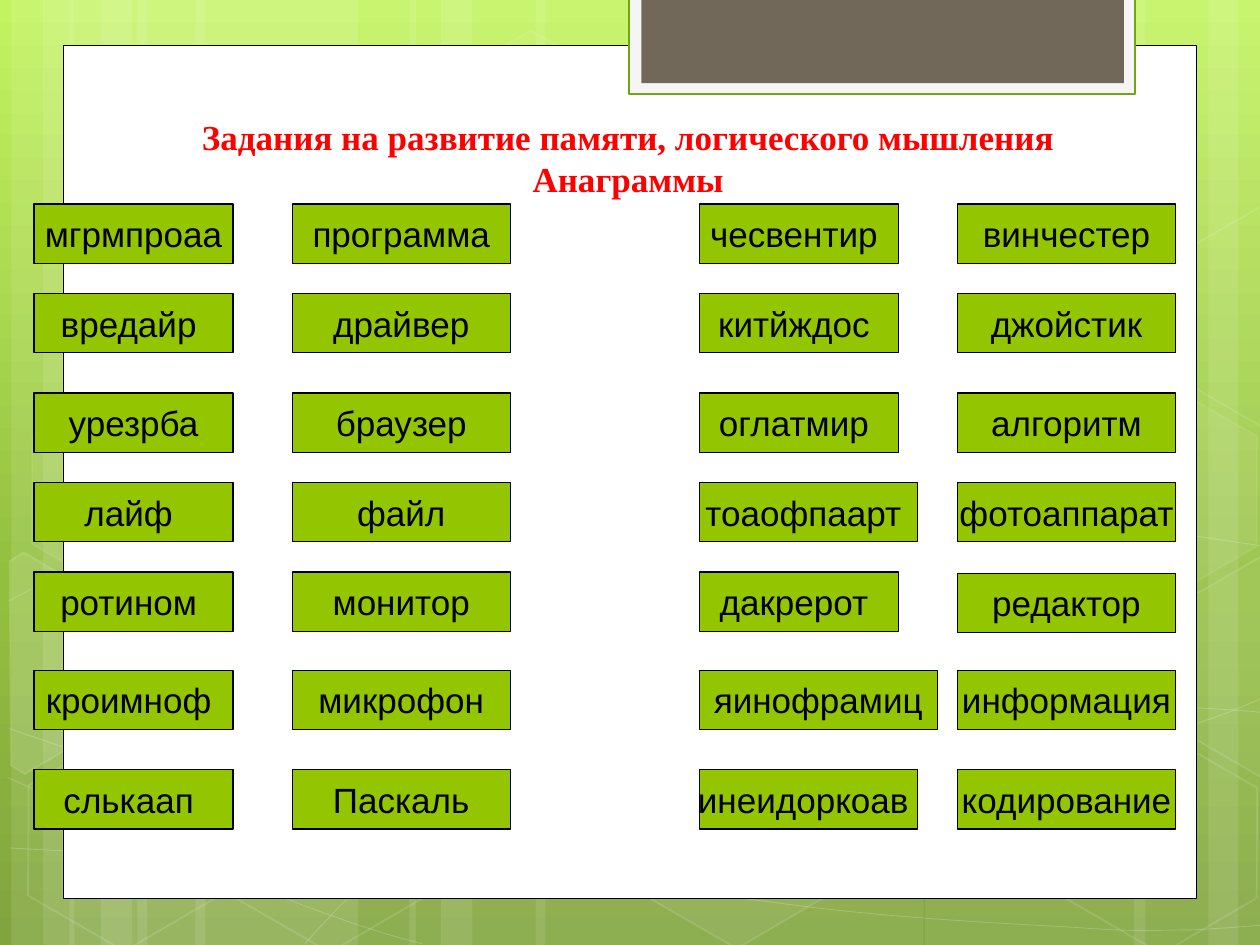
from copy import deepcopy
from math import cos, radians, sin

from lxml import etree
from pptx import Presentation
from pptx.dml.color import RGBColor
from pptx.enum.shapes import MSO_SHAPE
from pptx.enum.text import MSO_ANCHOR, PP_ALIGN
from pptx.oxml.ns import qn
from pptx.util import Inches, Pt

RECTANGLE, HEXAGON = MSO_SHAPE.RECTANGLE, MSO_SHAPE.HEXAGON
CENTER, MIDDLE, BOTTOM = PP_ALIGN.CENTER, MSO_ANCHOR.MIDDLE, MSO_ANCHOR.BOTTOM
WHITE, BLACK, RED, GREEN = "FFFFFF", "000000", "FF0000", "94C600"

TITLE = ["Задания на развитие памяти, логического мышления", "Анаграммы"]
ANAGRAMS = [
    [("мгрмпроаа", "программа"), ("чесвентир ", "винчестер")],
    [("вредайр ", "драйвер"), ("китйждос ", "джойстик")],
    [("урезрба", "браузер"), ("оглатмир ", "алгоритм")],
    [("лайф ", "файл"), ("тоаофпаарт ", "фотоаппарат")],
    [("ротином ", "монитор"), ("дакрерот ", "редактор")],
    [("кроимноф ", "микрофон"), ("яинофрамиц", "информация")],
    [("слькаап ", "Паскаль"), ("инеидоркоав ", "кодирование")],
]
ROW_TOPS = [1.62, 2.33, 3.12, 3.83, 4.54, 5.32, 6.11]
PAIR_LEFTS = [0.27, 5.55]
ANSWER_OFFSET, BOX_HEIGHT = 2.05, 0.47
PUZZLE_WIDTH, ANSWER_WIDTH = 1.58, 1.73
WIDE_PUZZLES = {"тоаофпаарт ": 1.73, "яинофрамиц": 1.89, "инеидоркоав ": 1.73}
LOWERED = {"редактор": 0.01}

GRADIENT = [(0, "C3F35F"), (0.62, "93BF3F"), (1, "81A53E")]
STRIPES = [
    (1.09, 1.75), (0.09, 0.5), (0.34, 0.83), (1.55, 1.75), (0.55, 0.5), (0.8, 0.83),
    (7.34, 1.75), (9.59, 0.5), (9, 0.83), (4.25, 3.08), (3.25, 0.5), (3.5, 0.83),
]
CURVES = [
    [(0.07, 6.73), (0.61, 6.76), (1.15, 6.79), (1.9, 6.78), (2.65, 6.77), (3.58, 6.75),
     (4.58, 6.65), (5.58, 6.55), (7, 6.36), (7.92, 6.17), (8.83, 5.98), (9.77, 5.68),
     (10.07, 5.51)],
    [(0.07, 4.77), (0.36, 4.61), (0.65, 4.46), (1.21, 4.31), (1.78, 4.16), (2.59, 3.94),
     (3.47, 3.87), (4.36, 3.8), (5.44, 3.79), (6.54, 3.87), (7.64, 3.95), (9.47, 4.26),
     (10.07, 4.34)],
    [(0.06, 6.17), (1.27, 6.72), (2.47, 7.27), (3.35, 7.49)],
    [(0.07, 5.78), (0.38, 5.89), (0.7, 6), (1.28, 6.16), (1.86, 6.31), (2.73, 6.56),
     (3.57, 6.73), (4.4, 6.9), (5.45, 7.08), (6.28, 7.18), (7.11, 7.29), (8, 7.33),
     (8.53, 7.36), (9.06, 7.4), (9.19, 7.38), (9.45, 7.38), (9.71, 7.37), (9.89, 7.35),
     (10.07, 7.34)],
    [(2.42, 7.49), (2.6, 7.29), (2.78, 7.09), (3.02, 6.91), (3.26, 6.72), (3.6, 6.53),
     (3.88, 6.39), (4.16, 6.25), (4.33, 6.19), (4.69, 6.09), (5.06, 5.99), (5.73, 5.85),
     (6.08, 5.78), (6.44, 5.71), (6.49, 5.71), (6.8, 5.69), (7.11, 5.66), (7.6, 5.63),
     (7.94, 5.62), (8.29, 5.61), (8.86, 5.62), (8.86, 5.62), (9.08, 5.62), (9.31, 5.62),
     (9.53, 5.62), (9.71, 5.63), (9.88, 5.64), (9.97, 5.65), (10.06, 5.66), (10.03, 5.65),
     (10.06, 5.66)],
]
TILT = 30
HEXAGONS = [
    (3.34, 0.36, 4, 8), (4.97, 5.89, 6, 12), (0.11, 5.91, 0, 12), (0.14, 3.12, 7, 8),
    (1.74, 5.92, 0, 12), (7.53, 4.53, 10, 12), (8.34, 5.93, 0, 12), (8.34, 3.14, 7, 8),
]
CUT_HEXAGONS = [
    ((0.36, 5.36), 10, [(0.08, 4.45), (0.19, 4.38), (0.96, 4.83), (0.95, 5.7),
                        (0.2, 6.14), (0.09, 6.07)]),
    ((9.85, 5.2), 4, [(9.26, 4.85), (10.02, 4.41), (10.09, 4.46), (10.09, 6.13),
                      (10.02, 6.17), (9.26, 5.73)]),
    ((9.85, 2.41), 0, [(9.26, 2.07), (10.02, 1.63), (10.1, 1.68), (10.09, 3.35),
                       (10.02, 3.39), (9.26, 2.95)]),
]
PANELS = [
    ((0.5, 0.36, 9, 6.77), WHITE, BLACK, 0.5),
    ((4.99, -0.02, 4.02, 0.77), "F5F5F5", "74A510", 1.25),
    ((5.09, -0.02, 3.83, 0.68), "71685A", None, 0),
]


def rgb(color):
    return RGBColor.from_string(color)


def fade(shape, query, percent):
    for color in shape.element.spPr.xpath(query):
        etree.SubElement(color, qn("a:alpha"), val=str(percent * 1000))


def style(shape, fill=None, line=None, width=1, fill_alpha=100, line_alpha=100):
    shape.shadow.inherit = False
    if fill and fill_alpha:
        shape.fill.solid()
        shape.fill.fore_color.rgb = rgb(fill)
    else:
        shape.fill.background()
    if line:
        shape.line.color.rgb = rgb(line)
        shape.line.width = Pt(width)
    else:
        shape.line.fill.background()
    if fill_alpha < 100:
        fade(shape, "a:solidFill/a:srgbClr", fill_alpha)
    if line_alpha < 100:
        fade(shape, "a:ln/a:solidFill/a:srgbClr", line_alpha)
    return shape


def add_preset(slide, preset, box, **look):
    shape = slide.shapes.add_shape(preset, *map(Inches, box))
    return style(shape, **look)


def add_outline(slide, points, closed, **look):
    corners = [(Inches(x), Inches(y)) for x, y in points]
    builder = slide.shapes.build_freeform(*corners[0])
    builder.add_line_segments(corners[1:], close=closed)
    return style(builder.convert_to_shape(), **look)


def bend(outline):
    segments = outline.element.xpath(".//a:path/a:lnTo")
    for start in range(0, len(segments), 3):
        curve = etree.SubElement(segments[start].getparent(), qn("a:cubicBezTo"))
        for segment in segments[start:start + 3]:
            curve.append(segment[0])
            segment.getparent().remove(segment)


def untilt(points, center):
    c, s = cos(radians(TILT)), sin(radians(TILT))
    offsets = [(x - center[0], y - center[1]) for x, y in points]
    return [(center[0] + x * c + y * s, center[1] - x * s + y * c) for x, y in offsets]


def format_text(frame, font, color, bold=False):
    for paragraph in frame.paragraphs:
        paragraph.alignment = CENTER
        for run in paragraph.runs:
            run.font.name, run.font.size, run.font.bold = font, Pt(20), bold
            run.font.color.rgb = rgb(color)


def add_background(slide):
    fill = slide.background.fill
    fill.gradient()
    fill.gradient_angle = 270
    stop_list = slide.element.find(".//" + qn("a:gsLst"))
    stop_list.append(deepcopy(stop_list[0]))
    for stop, (position, color) in zip(fill.gradient_stops, GRADIENT):
        stop.position = position
        stop.color.rgb = rgb(color)


def add_decor(slide):
    for left, width in STRIPES:
        add_preset(slide, RECTANGLE, (left, 0, width, 7.5), fill=WHITE, fill_alpha=10)
    for knots in CURVES:
        bend(add_outline(slide, knots, False, line=WHITE, width=0.5, line_alpha=20))
    for left, top, fill_alpha, line_alpha in HEXAGONS:
        hexagon = add_preset(slide, HEXAGON, (left, top, 1.75, 1.52), fill=WHITE,
                             line=WHITE, fill_alpha=fill_alpha, line_alpha=line_alpha)
        hexagon.adjustments[0], hexagon.adjustments[1] = 0.285, 1.155
        hexagon.rotation = TILT
    for center, fill_alpha, corners in CUT_HEXAGONS:
        piece = add_outline(slide, untilt(corners, center), True, fill=WHITE, line=WHITE,
                            fill_alpha=fill_alpha, line_alpha=12)
        piece.rotation = TILT
    for box, fill, line, width in PANELS:
        add_preset(slide, RECTANGLE, box, fill=fill, line=line, width=width)


def move_decor_to_layout(slide):
    layout_tree = slide.slide_layout.shapes.element
    decor = [shape for shape in slide.shapes if not shape.is_placeholder]
    for position, shape in enumerate(decor, start=2):
        layout_tree.insert(position, shape.element)


def add_title(slide):
    title = slide.shapes.title
    title.left, title.top, title.width, title.height = map(Inches, (0.67, 0.37, 8.43, 1.25))
    frame = title.text_frame
    frame.text = "\v".join(TITLE)
    frame.vertical_anchor, frame.word_wrap = BOTTOM, True
    frame.margin_left, frame.margin_bottom = Inches(0.3), Inches(0.04)
    format_text(frame, "Times New Roman", RED, bold=True)


def add_word(slide, word, left, top, width):
    box = (left, top + LOWERED.get(word, 0), width, BOX_HEIGHT)
    card = add_preset(slide, RECTANGLE, box, fill=GREEN, line=BLACK, width=0.75)
    frame = card.text_frame
    frame.text = word
    frame.word_wrap, frame.vertical_anchor = False, MIDDLE
    format_text(frame, "Arial", BLACK)


def main():
    deck = Presentation()
    deck.slide_width, deck.slide_height = Inches(10), Inches(7.5)
    slide = deck.slides.add_slide(deck.slide_layouts[5])
    add_background(slide)
    add_decor(slide)
    move_decor_to_layout(slide)
    add_title(slide)
    for top, pairs in zip(ROW_TOPS, ANAGRAMS):
        for left, (puzzle, answer) in zip(PAIR_LEFTS, pairs):
            add_word(slide, puzzle, left, top, WIDE_PUZZLES.get(puzzle, PUZZLE_WIDTH))
            add_word(slide, answer, left + ANSWER_OFFSET, top, ANSWER_WIDTH)
    deck.save("out.pptx")


if __name__ == "__main__":
    main()
